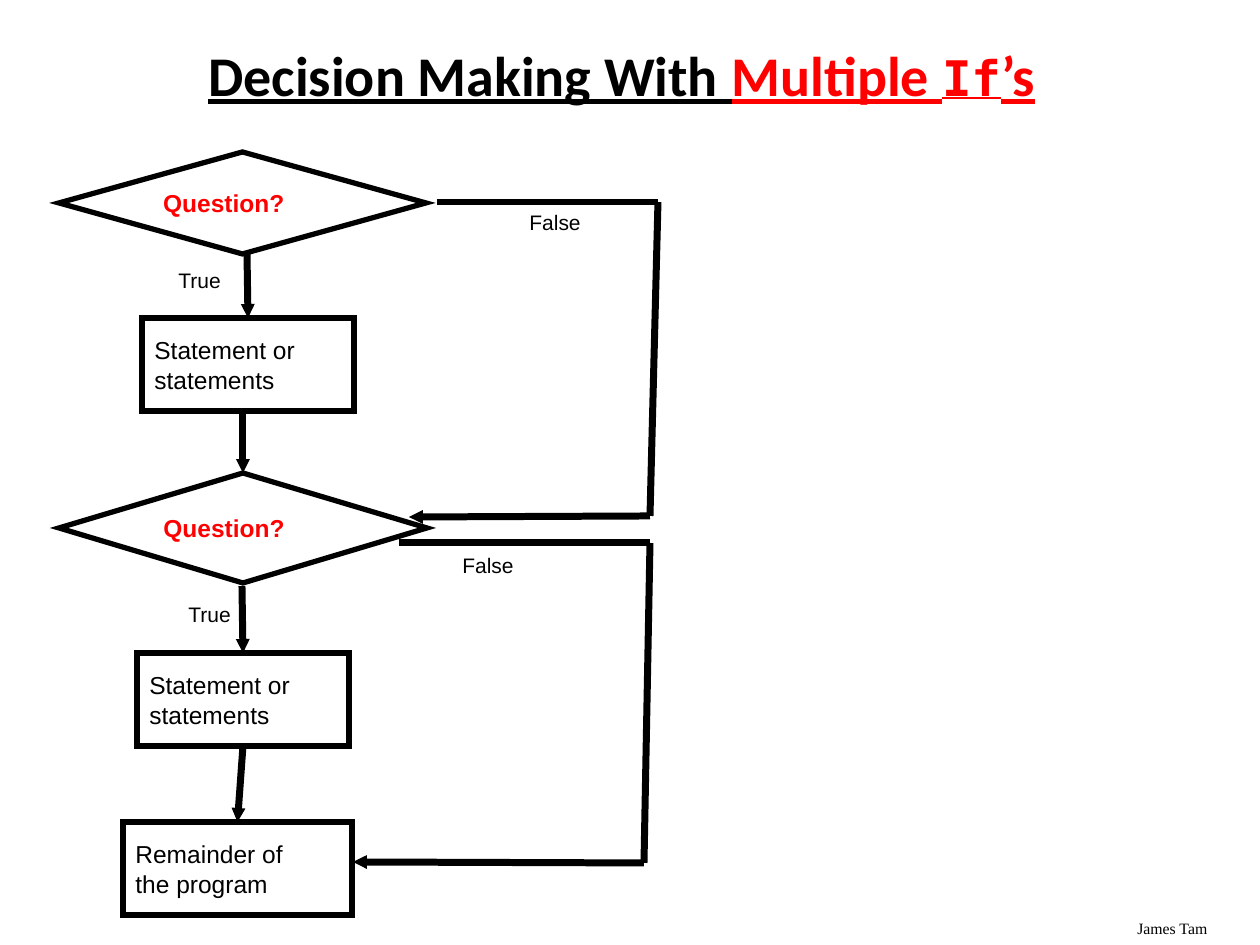
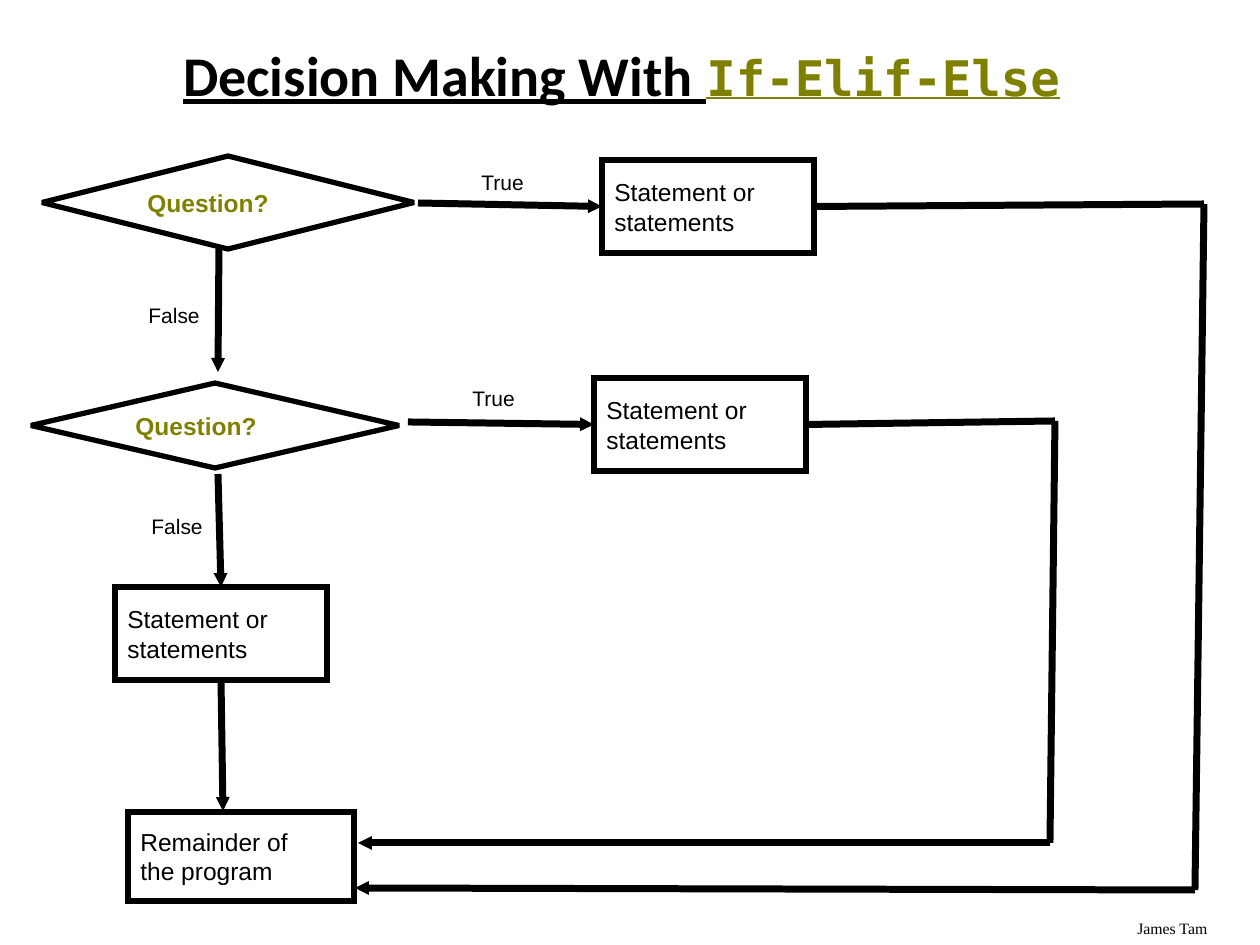
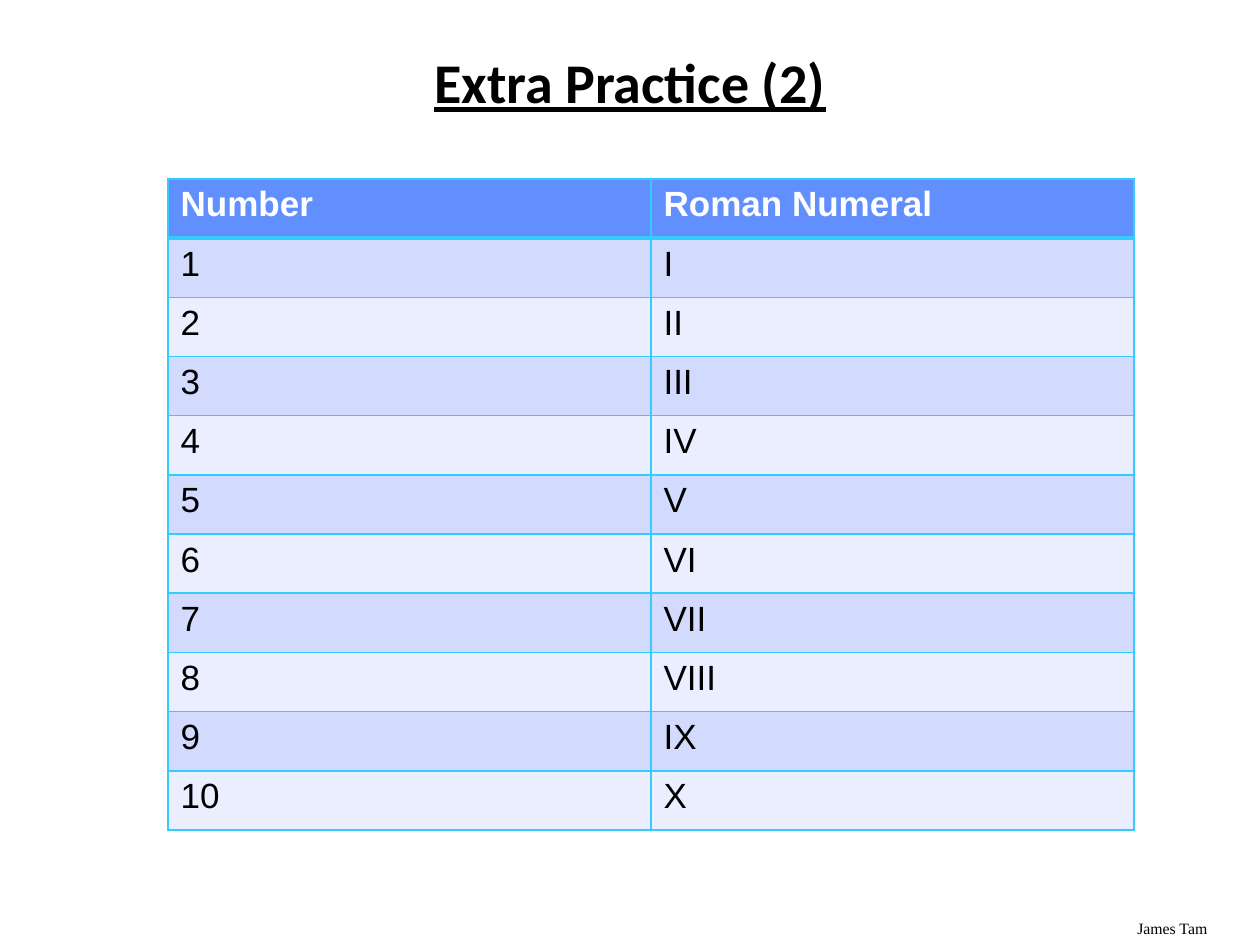
from lxml import etree
from pptx import Presentation
from pptx.dml.color import RGBColor
from pptx.enum.shapes import MSO_CONNECTOR, MSO_SHAPE
from pptx.enum.text import MSO_ANCHOR, PP_ALIGN
from pptx.oxml.ns import qn
from pptx.util import Emu, Pt

STRAIGHT = MSO_CONNECTOR.STRAIGHT
DIAMOND = MSO_SHAPE.DIAMOND
RECT = MSO_SHAPE.RECTANGLE
MIDDLE = MSO_ANCHOR.MIDDLE
LEFT = PP_ALIGN.LEFT
CENTER = PP_ALIGN.CENTER
TOP_SIDE, LEFT_SIDE, BOTTOM_SIDE, RIGHT_SIDE = range(4)

SCALE = 914400 / 126
BLACK = "000000"
WHITE = "FFFFFF"
RED = "FF0000"
OLIVE = "808000"
HEAD_FILL = "618FFD"
BANDS = ("D2DBFE", "EAEEFF")
GRID = "33CCFF"
SANS = "Arial"
SERIF = "Times New Roman"
HEADING = "Calibri"
CODE = "DejaVu Sans Mono"
TITLE_BOX = (59, 42, 1125, 72)
STEP = "Statement or\nstatements"
REST = "Remainder of\nthe program"
ROMANS = ("I", "II", "III", "IV", "V", "VI", "VII", "VIII", "IX", "X")


def px(value):
    return Emu(round(value * SCALE))


def rgb(code):
    return RGBColor.from_string(code)


def style(font, size, color=BLACK, bold=False, name=SANS):
    font.name = name
    font.size = Pt(size)
    font.bold = bold
    font.color.rgb = rgb(color)


def fill_text(frame, text, size, color=BLACK, bold=False, name=SANS):
    frame.word_wrap = True
    frame.text = text
    for para in frame.paragraphs:
        para.alignment = LEFT
        for run in para.runs:
            style(run.font, size, color, bold, name)


def add_text(slide, box, text, size, name=SANS):
    shape = slide.shapes.add_textbox(*map(px, box))
    fill_text(shape.text_frame, text, size, name=name)


def add_title(slide, parts, box=TITLE_BOX):
    frame = slide.shapes.add_textbox(*map(px, box)).text_frame
    frame.word_wrap = True
    frame.vertical_anchor = MIDDLE
    para = frame.paragraphs[0]
    para.alignment = CENTER
    para.line_spacing = 0.9
    for text, color, name in parts:
        run = para.add_run()
        run.text = text
        style(run.font, 28 if name == CODE else 32, color, True, name)
        run.font.underline = True


def add_node(slide, kind, box, text, color=BLACK, bold=False):
    node = slide.shapes.add_shape(kind, *map(px, box))
    node.shadow.inherit = False
    node.fill.background()
    node.line.color.rgb = rgb(BLACK)
    node.line.width = Pt(3)
    etree.SubElement(node.line._get_or_add_ln(), qn("a:miter"), lim="800000")
    node.text_frame.vertical_anchor = MIDDLE
    fill_text(node.text_frame, text, 14, color, bold)
    return node


def ask(slide, box, color):
    return add_node(slide, DIAMOND, box, "Question?", color, True)


def add_step(slide, left, top):
    return add_node(slide, RECT, (left, top, 212, 93), STEP)


def add_label(slide, left, top, text):
    add_text(slide, (left, top, 81, 38), text, 12)


def add_line(slide, start, end, tip=False):
    spots = []
    for spot in (start, end):
        spots += map(px, spot) if isinstance(spot[0], int) else (0, 0)
    line = slide.shapes.add_connector(STRAIGHT, *spots)
    if not isinstance(start[0], int):
        line.begin_connect(*start)
    if not isinstance(end[0], int):
        line.end_connect(*end)
    line.line.color.rgb = rgb(BLACK)
    line.line.width = Pt(4)
    if tip:
        etree.SubElement(line.line._get_or_add_ln(), qn("a:tailEnd"),
                         type="triangle", w="sm", len="sm")
    etree.SubElement(line._element.spPr, qn("a:effectLst"))


def add_route(slide, *spots):
    last = len(spots) - 2
    for i, pair in enumerate(zip(spots, spots[1:])):
        add_line(slide, *pair, tip=i == last)


def set_edges(cell, top, bottom):
    props = cell._tc.get_or_add_tcPr()
    widths = (("L", 1), ("R", 1), ("T", top), ("B", bottom))
    for i, (side, width) in enumerate(widths):
        edge = etree.Element(qn("a:ln" + side), w=str(Pt(width)))
        paint = etree.SubElement(edge, qn("a:solidFill"))
        etree.SubElement(paint, qn("a:srgbClr"), val=GRID)
        props.insert(i, edge)


def add_grid(slide, rows, box):
    grid = slide.shapes.add_table(len(rows), len(rows[0]), *map(px, box)).table
    for r, row in enumerate(rows):
        head = r == 0
        for c, text in enumerate(row):
            cell = grid.cell(r, c)
            cell.fill.solid()
            cell.fill.fore_color.rgb = rgb(HEAD_FILL if head else BANDS[(r - 1) % 2])
            fill_text(cell.text_frame, text, 20, WHITE if head else BLACK, head)
            set_edges(cell, 3 if r == 1 else 1, 3 if head else 1)


def new_slide(deck):
    slide = deck.slides.add_slide(deck.slide_layouts[6])
    add_text(slide, (1125, 913, 126, 32), "James Tam", 9, SERIF)
    return slide


def draw_ifs(slide):
    add_title(slide, (("Decision Making With ", BLACK, HEADING),
                      ("Multiple ", RED, HEADING),
                      ("If", RED, CODE), ("’s", RED, HEADING)))
    ask(slide, (59, 152, 367, 102), RED)
    second = ask(slide, (59, 473, 368, 110), RED)
    step = add_step(slide, 142, 318)
    other = add_step(slide, 137, 653)
    rest = add_node(slide, RECT, (123, 822, 229, 93), REST)
    add_line(slide, (247, 253), (step, TOP_SIDE), True)
    add_line(slide, (243, 412), (second, TOP_SIDE), True)
    add_line(slide, (242, 586), (other, TOP_SIDE), True)
    add_line(slide, (other, BOTTOM_SIDE), (rest, TOP_SIDE), True)
    add_route(slide, (437, 202), (658, 202), (650, 516), (409, 517))
    add_route(slide, (399, 543), (650, 543), (644, 863), (353, 862))
    add_label(slide, 166, 261, "True")
    add_label(slide, 176, 595, "True")
    add_label(slide, 517, 203, "False")
    add_label(slide, 450, 546, "False")


def draw_elif(slide):
    add_title(slide, (("Decision Making With ", BLACK, HEADING),
                      ("If-Elif-Else", OLIVE, CODE)))
    ask(slide, (42, 156, 372, 93), OLIVE)
    ask(slide, (31, 383, 368, 85), OLIVE)
    first = add_step(slide, 602, 160)
    second = add_step(slide, 594, 378)
    third = add_step(slide, 115, 587)
    add_node(slide, RECT, (128, 812, 226, 89), REST)
    add_line(slide, (418, 203), (first, LEFT_SIDE), True)
    add_line(slide, (408, 422), (second, LEFT_SIDE), True)
    add_line(slide, (219, 249), (218, 372), True)
    add_line(slide, (218, 474), (third, TOP_SIDE), True)
    add_line(slide, (third, BOTTOM_SIDE), (223, 811), True)
    add_route(slide, (first, RIGHT_SIDE), (1204, 204), (1195, 890), (355, 888))
    add_route(slide, (second, RIGHT_SIDE), (1055, 421), (1050, 843), (358, 843))
    add_label(slide, 469, 163, "True")
    add_label(slide, 460, 379, "True")
    add_label(slide, 136, 296, "False")
    add_label(slide, 139, 507, "False")


def draw_table(slide):
    add_title(slide, (("Extra Practice (2)", BLACK, HEADING),), (63, 35, 1134, 101))
    rows = [("Number", "Roman Numeral")]
    rows += [(str(n), roman) for n, roman in enumerate(ROMANS, 1)]
    add_grid(slide, rows, (168, 179, 966, 651))


def main():
    deck = Presentation()
    deck.slide_width = px(1260)
    deck.slide_height = px(945)
    for draw in (draw_ifs, draw_elif, draw_table):
        draw(new_slide(deck))
    deck.save("out.pptx")


if __name__ == "__main__":
    main()
